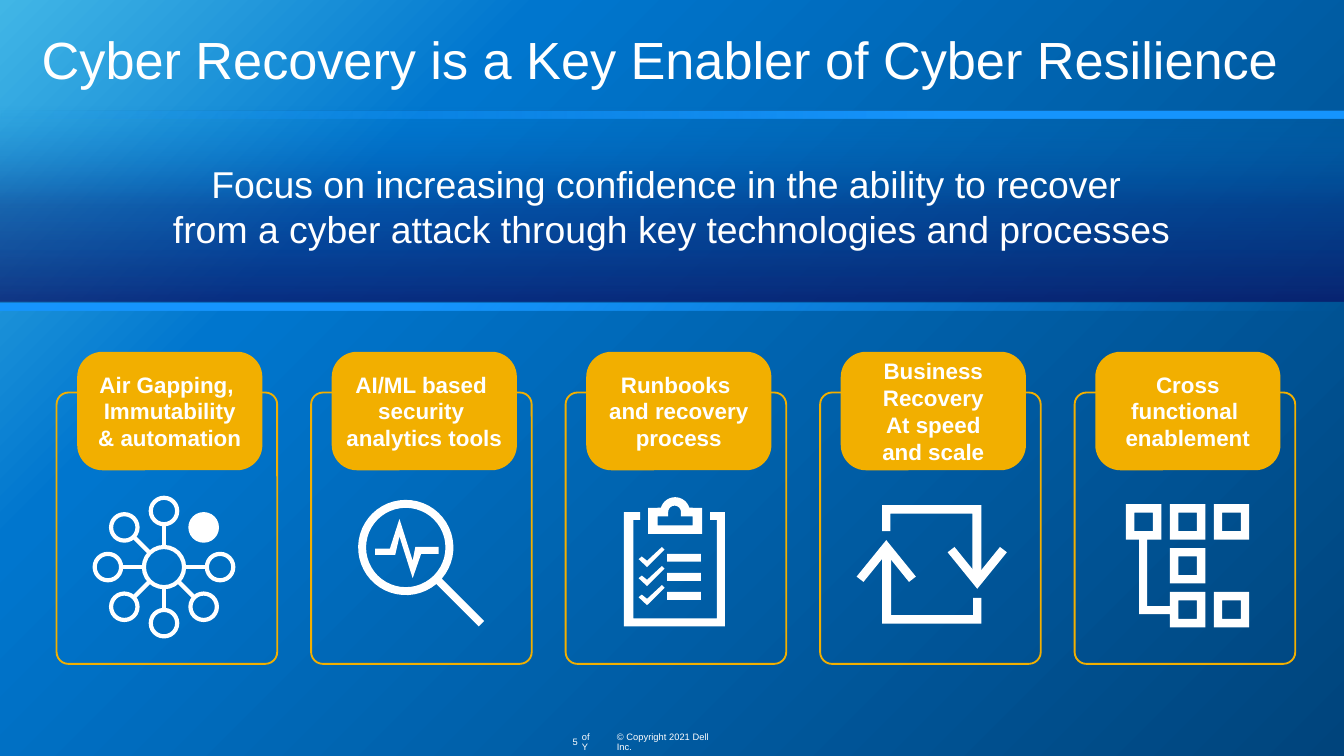
from math import cos, radians, sin

from lxml import etree
from pptx import Presentation
from pptx.dml.color import RGBColor
from pptx.enum.shapes import MSO_CONNECTOR, MSO_SHAPE
from pptx.enum.text import MSO_ANCHOR, PP_ALIGN
from pptx.oxml.ns import qn
from pptx.util import Cm, Pt

RECT, ROUND, OVAL = MSO_SHAPE.RECTANGLE, MSO_SHAPE.ROUNDED_RECTANGLE, MSO_SHAPE.OVAL
LINE = MSO_CONNECTOR.STRAIGHT
LEFT, MID, RIGHT = PP_ALIGN.LEFT, PP_ALIGN.CENTER, PP_ALIGN.RIGHT
TOP, CORE = MSO_ANCHOR.TOP, MSO_ANCHOR.MIDDLE
HUE = {"white": "FFFFFF", "gold": "F2AF00", "bar": "1796FF", "sky": "41B6E6",
       "blue": "0076CE", "deep": "00447C", "haze": "0075CD", "navy": "082F82",
       "night": "0B1062"}
FONT = {"name": "Arial", "bold": False}
WIDE, HIGH = 25.4, 14.29


def tint(name):
    return RGBColor.from_string(HUE[name])


def blend(fill, root, stops, angle):
    fill.gradient()
    grad = root.find(".//" + qn("a:gradFill"))
    rail = grad.find(qn("a:gsLst"))
    for old in list(rail):
        rail.remove(old)
    for pos, name, alpha in stops:
        stop = etree.SubElement(rail, qn("a:gs"), pos=str(pos * 1000))
        tone = etree.SubElement(stop, qn("a:srgbClr"), val=HUE[name])
        if alpha < 100:
            etree.SubElement(tone, qn("a:alpha"), val=str(alpha * 1000))
    grad.find(qn("a:lin")).set("ang", str(angle * 60000))


def style(shape, fill=None, line=None, width=1):
    shape.shadow.inherit = False
    if fill:
        shape.fill.solid()
        shape.fill.fore_color.rgb = tint(fill)
    else:
        shape.fill.background()
    if line:
        shape.line.color.rgb = tint(line)
        shape.line.width = Pt(width)
    else:
        shape.line.fill.background()
    return shape


def put(shapes, kind, box, **look):
    return style(shapes.add_shape(kind, *map(Cm, box)), **look)


def write(shape, text, size, align=LEFT, anchor=CORE, wrap=True, space=1, **font):
    frame = shape.text_frame
    rules = {"word_wrap": wrap, "vertical_anchor": anchor, "margin_left": 0,
             "margin_right": 0, "margin_top": 0, "margin_bottom": 0, "text": text}
    for key, value in rules.items():
        setattr(frame, key, value)
    for para in frame.paragraphs:
        para.alignment = align
        para.line_spacing = space
        for run in para.runs:
            for key, value in {**FONT, "size": Pt(size), **font}.items():
                setattr(run.font, key, value)
            run.font.color.rgb = tint("white")


def label(shapes, box, text, size, **rules):
    write(shapes.add_textbox(*map(Cm, box)), text, size, space=0.9, **rules)


def draw(shapes, x, y, *rings):
    pen = None
    for ring in rings:
        dots = [(Cm(x + a), Cm(y + b)) for a, b in ring]
        if pen is None:
            pen = shapes.build_freeform(*dots[0], scale=1.0)
        else:
            pen.move_to(*dots[0])
        pen.add_line_segments(dots[1:], close=True)
    style(pen.convert_to_shape(), fill="white")


def polar(cx, cy, r, angle):
    return cx + r * cos(radians(angle)), cy + r * sin(radians(angle))


def arc(cx, cy, r, start, end, steps=48):
    return [polar(cx, cy, r, start + (end - start) * i / steps)
            for i in range(steps + 1)]


def square(x, y, side):
    return [(x, y), (x + side, y), (x + side, y + side), (x, y + side)]


def hub(shapes, x, y):
    cx, cy, core, node, reach = x + 2.03, y + 3.3, 0.38, 0.25, 1.06

    def ring(mx, my, r, fill=None):
        put(shapes, OVAL, (mx - r, my - r, 2 * r, 2 * r),
            fill=fill, line="white", width=2.25)

    ring(cx, cy, core)
    for angle in range(0, 360, 45):
        free = angle == 315
        ring(*polar(cx, cy, reach, angle), node, "white" if free else None)
        if not free:
            ends = polar(cx, cy, core, angle) + polar(cx, cy, reach - node, angle)
            link = shapes.add_connector(LINE, *map(Cm, ends))
            link.line.color.rgb = tint("white")
            link.line.width = Pt(2.25)
            etree.SubElement(link._element.spPr, qn("a:effectLst"))


def lens(shapes, x, y):
    draw(shapes, x, y,
         arc(1.79, 2.93, 0.9, 50, 401) + [(3.27, 4.32), (3.17, 4.42)],
         arc(1.79, 2.93, 0.75, 0, 360))
    draw(shapes, x, y, [
        (1.92, 3.51), (1.67, 2.72), (1.59, 3.07), (1.21, 3.07), (1.21, 2.95),
        (1.49, 2.95), (1.67, 2.39), (1.92, 3.18), (1.97, 2.92), (2.41, 2.92),
        (2.41, 3.05), (2.08, 3.05)])


def board(shapes, x, y):
    draw(shapes, x, y, [
        (2.73, 2.26), (2.73, 2.41), (2.86, 2.41), (2.86, 4.27), (1.28, 4.27),
        (1.28, 2.41), (1.41, 2.41), (1.41, 2.26), (1.1, 2.26), (1.1, 4.42),
        (3.01, 4.42), (3.01, 2.26)])
    draw(shapes, x, y,
         [(2.58, 2.18)] + arc(2.07, 2.26, 0.28, 343, 197)
         + [(1.56, 2.18), (1.56, 2.67), (2.58, 2.67)],
         [(2.4, 2.51), (1.74, 2.51), (1.74, 2.34), (1.94, 2.34)]
         + arc(2.06, 2.26, 0.12, 180, 360) + [(2.18, 2.34), (2.4, 2.34)])
    for row in range(3):
        drop = y + row * 0.36
        draw(shapes, x, drop, [(1.82, 2.92), (1.54, 3.18), (1.44, 3.1),
                               (1.38, 3.15), (1.54, 3.3), (1.87, 2.97)])
        put(shapes, RECT, (x + 1.92, drop + 3.05, 0.64, 0.15), fill="white")


def cycle(shapes, x, y):
    hook = [(3.05, 3.48), (2.88, 3.48), (2.88, 2.29), (1.33, 2.29),
            (1.33, 2.62), (1.17, 2.62), (1.17, 2.13), (3.05, 2.13)]
    head = [(1.68, 3.58), (1.25, 3.05), (0.82, 3.58), (0.69, 3.48),
            (1.25, 2.79), (1.81, 3.48)]
    for part in (hook, head):
        draw(shapes, x, y, part)
        draw(shapes, x, y, [(4.22 - a, 6.5 - b) for a, b in part])


def chart(shapes, x, y):
    step, side, rim = 0.83, 0.67, 0.16

    def hole(col, row):
        return square(0.97 + col * step + rim, 2.11 + row * step + rim,
                      side - 2 * rim)

    draw(shapes, x, y, [
        (1.8, 4.04), (1.37, 4.04), (1.37, 2.78), (1.64, 2.78), (1.64, 2.11),
        (0.97, 2.11), (0.97, 2.78), (1.22, 2.78), (1.22, 4.19), (1.8, 4.19),
        (1.8, 4.44), (2.47, 4.44), (2.47, 3.77), (1.8, 3.77)],
        hole(0, 0), hole(1, 2))
    for col, row in ((1, 0), (2, 0), (1, 1), (2, 2)):
        draw(shapes, x, y, square(0.97 + col * step, 2.11 + row * step, side),
             hole(col, row))


def card(shapes, box, text, icon):
    x, y, wide, high = box
    frame = put(shapes, ROUND, box, line="gold")
    frame.adjustments[0] = 0.054
    tag = put(shapes, ROUND, (x + 0.39, y - 0.77, 3.5, 2.24), fill="gold")
    tag.adjustments[0] = 0.213
    write(tag, text, 12, align=MID, wrap=False, bold=True)
    icon(shapes, x, y)


def banner(shapes, box):
    x, y, wide, high = box
    back = put(shapes, RECT, (x, y - 0.1, wide, high + 0.1))
    blend(back.fill, back._element,
          [(0, "haze", 0), (50, "navy", 50), (100, "night", 70)], 90)
    write(put(shapes, RECT, (x, y, wide, high)),
          "Focus on increasing confidence in the ability to recover \v"
          "from a cyber attack through key technologies and processes",
          20, align=MID)
    for top, angle in ((y, 180), (y + high + 0.03, 45)):
        bar = put(shapes, RECT, (x, top, wide, 0.14))
        blend(bar.fill, bar._element, [(29, "bar", 100), (100, "bar", 0)], angle)


def foot(shapes, y):
    label(shapes, (10.72, y, 0.2, 0.2), "5", 5, align=RIGHT, wrap=False)
    label(shapes, (11, y, 0.3, 0.2), "of Y", 5, wrap=False)
    label(shapes, (11.66, y, 2.05, 0.2), "© Copyright 2021 Dell Inc.", 5)


def main():
    deck = Presentation()
    deck.slide_width, deck.slide_height = Cm(WIDE), Cm(HIGH)
    slide = deck.slides.add_slide(deck.slide_layouts[6])
    shapes = slide.shapes
    blend(slide.background.fill, slide.element,
          [(0, "sky", 100), (26, "blue", 100), (100, "deep", 100)], 45)
    label(shapes, (0.79, 0.64, 23.82, 1.07),
          "Cyber Recovery is a Key Enabler of Cyber Resilience", 28, anchor=TOP)
    banner(shapes, (0, 2.1, WIDE, 3.6))
    cards = [("Air Gapping, \nImmutability\n& automation", hub),
             ("AI/ML based \vsecurity \vanalytics tools", lens),
             ("Runbooks \vand recovery\vprocess", board),
             ("Business\nRecovery\nAt speed\nand scale", cycle),
             ("Cross\nfunctional \nenablement", chart)]
    for i, (text, icon) in enumerate(cards):
        card(shapes, (1.07 + i * 4.81, 7.42, 4.17, 5.13), text, icon)
    foot(shapes, 13.94)
    deck.save("out.pptx")


if __name__ == "__main__":
    main()
